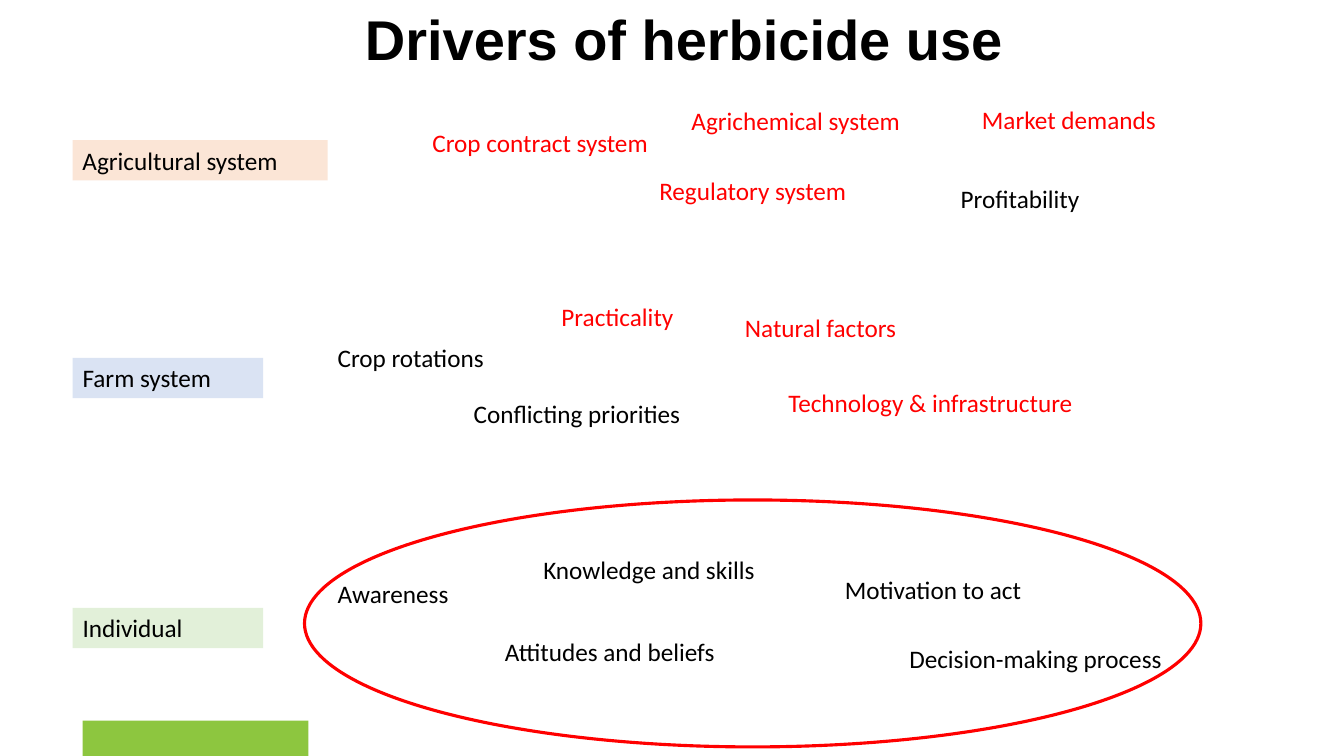
from pptx import Presentation
from pptx.dml.color import RGBColor
from pptx.enum.shapes import MSO_SHAPE
from pptx.enum.text import MSO_ANCHOR, PP_ALIGN
from pptx.util import Inches, Pt

RECTANGLE, OVAL = MSO_SHAPE.RECTANGLE, MSO_SHAPE.OVAL
TOP, LEFT = MSO_ANCHOR.TOP, PP_ALIGN.LEFT
TITLE_ONLY = 5

COLORS = {
    "black": "000000", "red": "FF0000", "green": "8DC63F",
    "orange_tint": "FBE5D6", "blue_tint": "DAE3F3", "green_tint": "E2F0D9",
}
LINE_HEIGHT = 0.4

# Each level: box, label (text, offset down, width, fill),
# drivers (text, offset right, offset down, width, colour)
LEVELS = [
    ((0.72, 5.45, 11.19, 1.28),
     ("Individual", 0.58, 1.89, "green_tint"),
     [("Awareness", 2.53, 0.24, 2.99, "black"),
      ("Attitudes and beliefs", 4.19, 0.81, 2.99, "black"),
      ("Motivation to act", 7.56, 0.2, 2.99, "black"),
      ("Knowledge and skills", 4.57, 0, 2.99, "black"),
      ("Decision-making process", 8.2, 0.88, 2.99, "black")]),
    ((0.72, 2.94, 10.47, 1.36),
     ("Farm system", 0.61, 1.89, "blue_tint"),
     [("Crop rotations", 2.53, 0.41, 2.05, "black"),
      ("Conflicting priorities", 3.88, 0.96, 2.69, "black"),
      ("Practicality", 4.75, 0, 2.57, "red"),
      ("Technology & infrastructure", 7, 0.85, 3.47, "red"),
      ("Natural factors", 6.57, 0.11, 1.76, "red")]),
    ((0.72, 0.99, 11.4, 1.18),
     ("Agricultural system", 0.4, 2.53, "orange_tint"),
     [("Crop contract system", 3.47, 0.22, 2.48, "red"),
      ("Regulatory system", 5.72, 0.7, 2.48, "red"),
      ("Agrichemical system", 6.04, 0.01, 2.48, "red"),
      ("Market demands", 8.92, 0, 2.48, "red"),
      ("Profitability", 8.71, 0.78, 2.48, "black")]),
]


def rgb(name):
    return RGBColor.from_string(COLORS[name])


def inches(box):
    return [Inches(length) for length in box]


def write(shape, text, color, size=18, font_name="Calibri", bold=False):
    frame = shape.text_frame
    frame.word_wrap = True
    frame.vertical_anchor = TOP
    frame.text = text
    paragraph = frame.paragraphs[0]
    paragraph.alignment = LEFT
    font = paragraph.runs[0].font
    font.name, font.size, font.bold = font_name, Pt(size), bold
    font.color.rgb = rgb(color)


def add_bar(slide, box, fill):
    bar = slide.shapes.add_shape(RECTANGLE, *inches(box))
    bar.shadow.inherit = False
    bar.fill.solid()
    bar.fill.fore_color.rgb = rgb(fill)
    bar.line.fill.background()
    return bar


def add_title(slide, box):
    title = slide.shapes.title
    title.left, title.top, title.width, title.height = inches(box)
    write(title, "Drivers of herbicide use", "black", 40, "Arial", True)
    title.text_frame.paragraphs[0].line_spacing = 0.9


def add_level(slide, box, label, drivers):
    left, top = box[:2]
    # Level label
    name, down, width, fill = label
    level_label = add_bar(slide, (left, top + down, width, LINE_HEIGHT), fill)
    write(level_label, name, "black")
    # Drivers acting at this level
    cluster = slide.shapes.add_group_shape()
    for text, right, down, width, color in drivers:
        driver = cluster.shapes.add_textbox(
            *inches((left + right, top + down, width, LINE_HEIGHT)))
        write(driver, text, color)


def add_focus_ring(slide, box):
    ring = slide.shapes.add_shape(OVAL, *inches(box))
    ring.shadow.inherit = False
    ring.fill.background()
    ring.line.color.rgb = rgb("red")
    ring.line.width = Pt(2.25)


def main():
    prs = Presentation()
    prs.slide_width, prs.slide_height = Inches(13.33), Inches(7.5)
    slide = prs.slides.add_slide(prs.slide_layouts[TITLE_ONLY])

    add_title(slide, (3.52, 0.07, 9.04, 0.96))
    add_bar(slide, (0.82, 7.15, 2.24, 0.35), "green")
    for box, label, drivers in LEVELS:
        add_level(slide, box, label, drivers)
    add_focus_ring(slide, (3.02, 4.96, 8.89, 2.45))

    prs.save("out.pptx")


if __name__ == "__main__":
    main()
